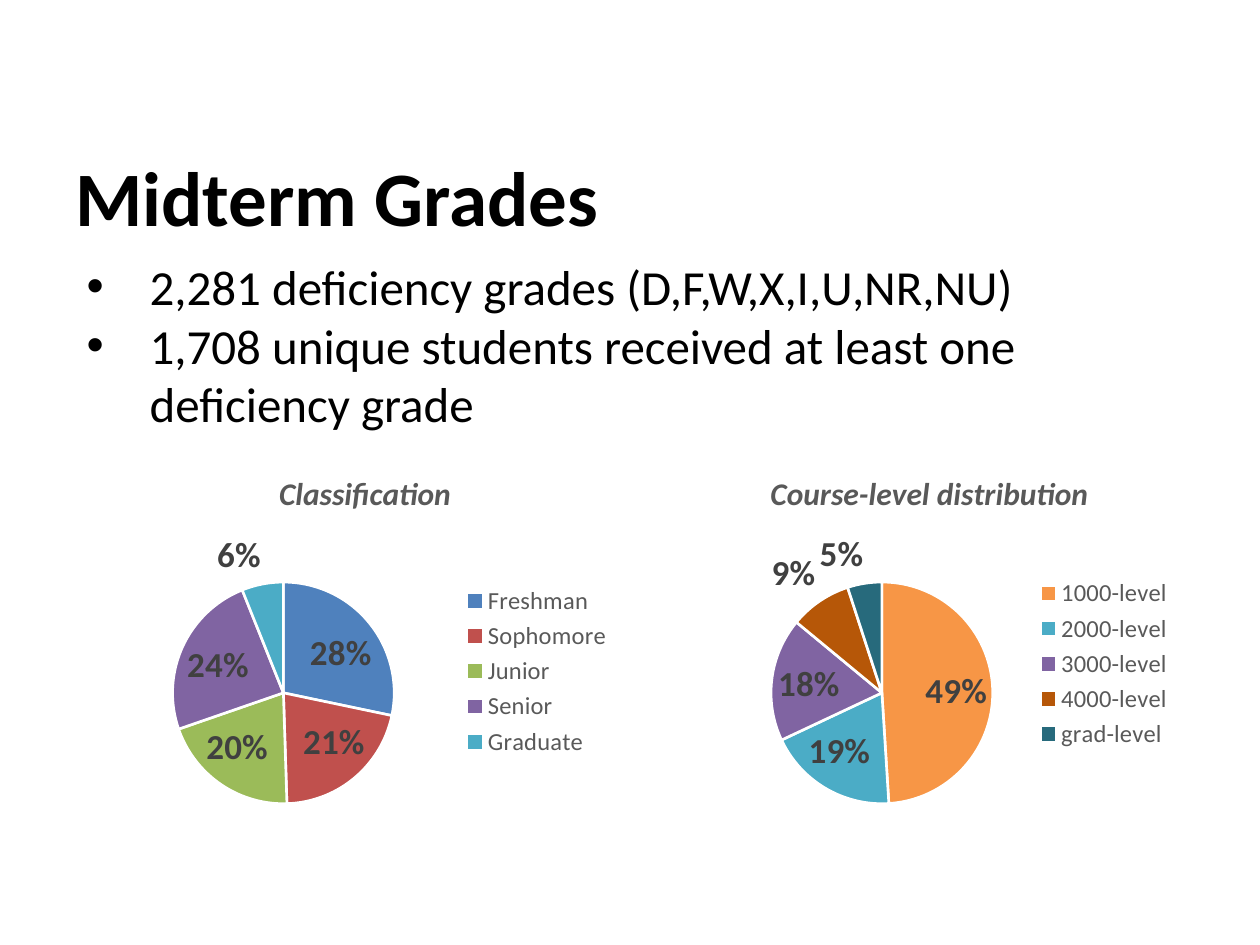
from lxml import etree
from pptx import Presentation
from pptx.chart.data import CategoryChartData
from pptx.dml.color import RGBColor
from pptx.enum.chart import XL_CHART_TYPE as Kind
from pptx.enum.chart import XL_LABEL_POSITION as Spot
from pptx.enum.chart import XL_LEGEND_POSITION as Side
from pptx.enum.text import MSO_ANCHOR as Anchor
from pptx.oxml.ns import qn
from pptx.util import Inches, Pt

FACE = "Calibri"
BLACK = RGBColor(0, 0, 0)
WHITE = RGBColor(255, 255, 255)
GRAY = RGBColor(0x59, 0x59, 0x59)
DARK = RGBColor(0x40, 0x40, 0x40)
BLUE = RGBColor(0x4F, 0x81, 0xBD)
RED = RGBColor(0xC0, 0x50, 0x4D)
GREEN = RGBColor(0x9B, 0xBB, 0x59)
PURPLE = RGBColor(0x80, 0x64, 0xA2)
AQUA = RGBColor(0x4B, 0xAC, 0xC6)
ORANGE = RGBColor(0xF7, 0x96, 0x46)
RUST = RGBColor(0xB6, 0x57, 0x08)
TEAL = RGBColor(0x27, 0x6A, 0x7C)


def style(font, size, color, bold=False, italic=False):
    font.name = FACE
    font.size = Pt(size)
    font.bold = bold
    font.italic = italic
    font.color.rgb = color


def bullet(para):
    props = para._p.get_or_add_pPr()
    props.set("marL", str(Inches(0.5)))
    props.set("indent", str(Inches(-0.5)))
    etree.SubElement(props, qn("a:buFont")).set("typeface", "Arial")
    etree.SubElement(props, qn("a:buChar")).set("char", "•")


def add_text(slide, text, box, size=28, bold=False, dots=False):
    frame = slide.shapes.add_textbox(*map(Inches, box)).text_frame
    frame.word_wrap = True
    frame.vertical_anchor = Anchor.MIDDLE
    frame.text = text
    for para in frame.paragraphs:
        if dots:
            bullet(para)
        style(para.font, size, BLACK, bold)


def place(node, after, inner=False, **spots):
    """Give a chart part a fixed place, in fractions of the chart."""
    old = node.find(qn("c:layout"))
    if old is not None:
        node.remove(old)
    layout = etree.Element(qn("c:layout"))
    manual = etree.SubElement(layout, qn("c:manualLayout"))
    if inner:
        etree.SubElement(manual, qn("c:layoutTarget")).set("val", "inner")
    for key in "xy":
        etree.SubElement(manual, qn(f"c:{key}Mode")).set("val", "edge")
    for key, val in spots.items():
        etree.SubElement(manual, qn(f"c:{key}")).set("val", f"{val:.4f}")
    if after is None:
        node.insert(0, layout)
    else:
        node.find(qn(after)).addnext(layout)


def add_pie(slide, title, box, rows, head, mid, key):
    """Head, mid and key are slide points: title, pie centre, legend."""
    left, top, wide, high = box
    data = CategoryChartData()
    data.categories = [row[0] for row in rows]
    data.add_series("Series 1", [row[1] for row in rows])
    chart = slide.shapes.add_chart(Kind.PIE, *map(Inches, box), data).chart
    style(chart.font, 10, BLACK)

    # Title and legend
    frame = chart.chart_title.text_frame
    frame.text = title
    style(frame.paragraphs[0].runs[0].font, 18, GRAY, True, True)
    chart.has_legend = True
    chart.legend.position = Side.RIGHT
    chart.legend.include_in_layout = False
    style(chart.legend.font, 14, GRAY)

    # Slices and labels
    plot = chart.plots[0]
    plot.vary_by_categories = True
    for i, row in enumerate(rows):
        look = plot.series[0].points[i].format
        look.fill.solid()
        look.fill.fore_color.rgb = row[2]
        look.line.color.rgb = WHITE
        look.line.width = Pt(1.5)
    plot.has_data_labels = True
    tags = plot.data_labels
    tags.show_percentage = True
    tags.show_value = False
    tags.number_format = "0%"
    tags.number_format_is_linked = False
    tags.position = Spot.BEST_FIT
    style(tags.font, 20, DARK, True)

    # Places of the parts
    def part(x, y):
        return {"x": (x - left) / wide, "y": (y - top) / high}

    rad = 0.88
    area = chart._chartSpace.find(".//" + qn("c:plotArea"))
    place(area, None, True, **part(mid[0] - rad, mid[1] - rad),
          w=2 * rad / wide, h=2 * rad / high)
    place(chart.chart_title._element, "c:tx", **part(*head))
    place(chart.legend._element, "c:legendPos", **part(*key))


def main():
    deck = Presentation()
    deck.slide_width, deck.slide_height = Inches(10), Inches(7.5)
    slide = deck.slides.add_slide(deck.slide_layouts[6])

    # Heading and bullets
    add_text(slide, "Midterm Grades", (0.5, 0.93, 9, 1.25), size=44, bold=True)
    add_text(slide, "2,281 deficiency grades (D,F,W,X,I,U,NR,NU)\n"
             "1,708 unique students received at least one deficiency grade",
             (0.59, 1.85, 9.07, 1.77), dots=True)

    # Charts
    add_pie(slide, "Course-level distribution", (4.67, 3.5, 5.33, 3.32),
            [("1000-level", 49, ORANGE), ("2000-level", 19, AQUA),
             ("3000-level", 18, PURPLE), ("4000-level", 9, RUST),
             ("grad-level", 5, TEAL)],
            head=(6.07, 3.7), mid=(7, 5.5), key=(8.2, 4.55))
    add_pie(slide, "Classification", (0.13, 3.5, 5.44, 3.31),
            [("Freshman", 28, BLUE), ("Sophomore", 21, RED),
             ("Junior", 20, GREEN), ("Senior", 24, PURPLE),
             ("Graduate", 6, AQUA)],
            head=(2.17, 3.7), mid=(2.25, 5.5), key=(3.65, 4.61))
    deck.save("out.pptx")


if __name__ == "__main__":
    main()
